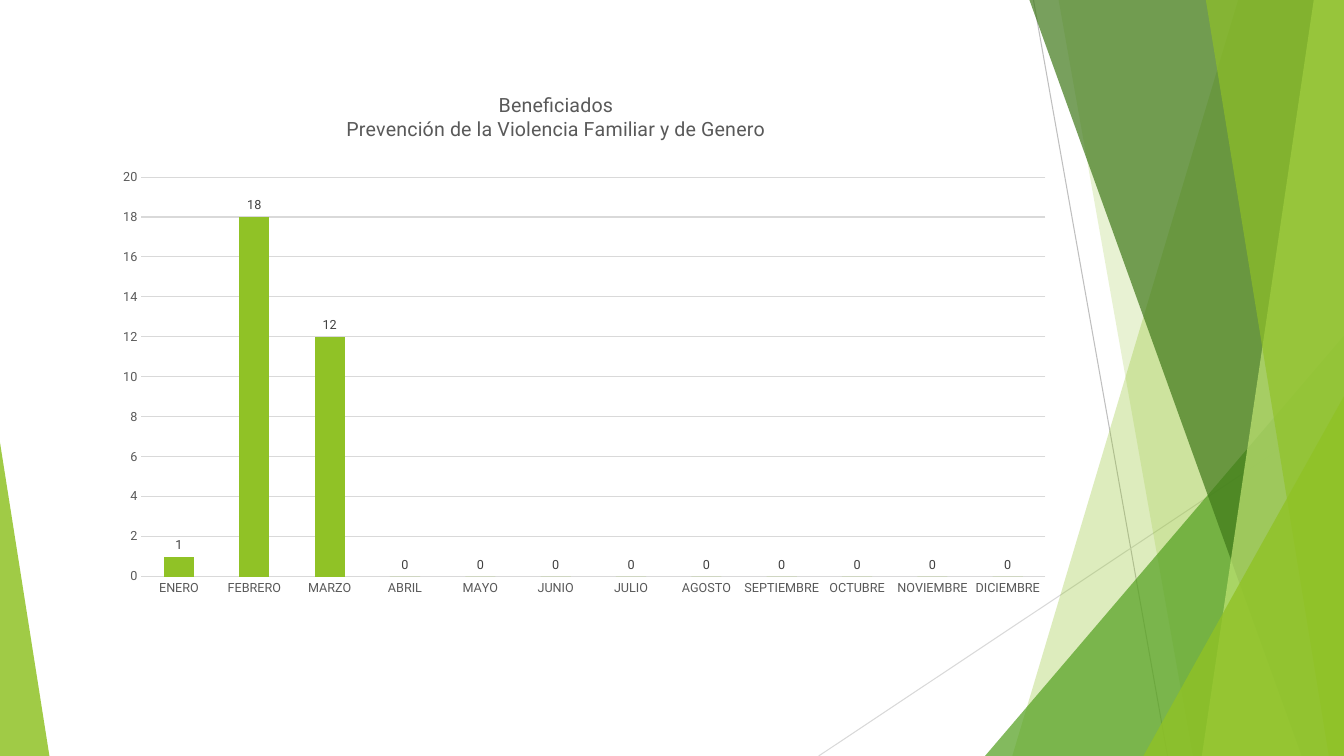
from lxml.etree import SubElement
from pptx import Presentation
from pptx.chart.data import CategoryChartData
from pptx.dml.color import RGBColor
from pptx.enum.chart import XL_CHART_TYPE, XL_LABEL_POSITION, XL_TICK_MARK
from pptx.enum.shapes import MSO_CONNECTOR, MSO_SHAPE
from pptx.oxml import parse_xml
from pptx.oxml.ns import nsdecls, qn
from pptx.util import Inches, Pt

LIME = RGBColor(0x90, 0xC2, 0x26)
GREEN = RGBColor(0x54, 0xA0, 0x21)
DARK = RGBColor(0x3F, 0x78, 0x19)
PALE = RGBColor(0xC0, 0xE4, 0x74)
SILVER = RGBColor(0xBF, 0xBF, 0xBF)
MIST = RGBColor(0xD9, 0xD9, 0xD9)
GRAY = RGBColor(0x59, 0x59, 0x59)
INK = RGBColor(0x40, 0x40, 0x40)
FONT = "Roboto"
WIDE, HIGH = 13.33, 7.5

MONTHS = ["ENERO", "FEBRERO", "MARZO", "ABRIL", "MAYO", "JUNIO", "JULIO",
          "AGOSTO", "SEPTIEMBRE", "OCTUBRE", "NOVIEMBRE", "DICIEMBRE"]
COUNTS = [1, 18, 12] + [0] * 9
TITLE = ["Beneficiados", "Prevención de la Violencia Familiar y de Genero"]


def style(item, **values):
    for name, value in values.items():
        setattr(item, name, value)


def set_font(font, size, color):
    style(font, name=FONT, size=Pt(size), bold=False)
    font.color.rgb = color


def paint(shape, color, alpha):
    shape.shadow.inherit = False
    shape.fill.solid()
    shape.fill.fore_color.rgb = color
    shape.line.fill.background()
    tint = shape.fill._xPr.find(qn("a:solidFill"))[0]
    SubElement(tint, qn("a:alpha")).set("val", str(alpha * 1000))


def add_line(slide, start, end, color):
    line = slide.shapes.add_connector(
        MSO_CONNECTOR.STRAIGHT, *map(Inches, start + end))
    line.line.color.rgb = color
    line.line.width = Pt(0.75)
    SubElement(line._element.spPr, qn("a:effectLst"))


def add_wedge(slide, box, peak, color, alpha):
    wedge = slide.shapes.add_shape(
        MSO_SHAPE.ISOSCELES_TRIANGLE, *map(Inches, box))
    wedge.adjustments[0] = peak
    paint(wedge, color, alpha)


def add_band(slide, box, head, foot, color, alpha):
    left, top, width, height = box
    right, base = left + width, top + height
    points = [(left + head, top), (right, top), (right, base), (left + foot, base)]
    points = [(Inches(x), Inches(y)) for x, y in points]
    path = slide.shapes.build_freeform(*points[0])
    path.add_line_segments(points[1:], close=True)
    paint(path.convert_to_shape(), color, alpha)


def draw_facets(slide, box):
    left, top, width, height = box
    right, base = left + width, top + height

    def corner(wide, high, color, alpha):
        add_wedge(slide, (right - wide, base - high, wide, high), 1, color, alpha)

    add_line(slide, (left + 2.13, top), (left + 3.46, base), SILVER)
    add_line(slide, (right, top + 4.03), (left, base), MIST)
    add_band(slide, box, 4.16, 1.92, LIME, 30)
    add_band(slide, box, 2.38, 3.71, LIME, 20)
    corner(3.56, 4.17, GREEN, 72)
    for head, foot, color, alpha in [(2.09, 4.79, DARK, 70),
                                     (4.91, 3.8, PALE, 70),
                                     (3.84, 5.06, LIME, 65)]:
        add_band(slide, box, head, foot, color, alpha)
    corner(1.99, 3.57, LIME, 80)


def set_layout(node, inner=False, **parts):
    old = node.find(qn("c:layout"))
    if old is not None:
        node.remove(old)
    target = '<c:layoutTarget val="inner"/>' if inner else ""
    modes = "".join(f'<c:{key}Mode val="edge"/>' for key in "xy")
    sizes = "".join(f'<c:{key} val="{part}"/>' for key, part in parts.items())
    layout = parse_xml(f'<c:layout {nsdecls("c")}><c:manualLayout>{target}'
                       f'{modes}{sizes}</c:manualLayout></c:layout>')
    text = node.find(qn("c:tx"))
    node.insert(0 if text is None else 1, layout)


def draw_chart(slide, box):
    data = CategoryChartData()
    data.categories = MONTHS
    data.add_series("Series 1", COUNTS)
    chart = slide.shapes.add_chart(
        XL_CHART_TYPE.COLUMN_CLUSTERED, *map(Inches, box), data).chart
    set_font(chart.font, 10, RGBColor(0, 0, 0))
    style(chart, has_legend=False, has_title=True)

    frame = chart.chart_title.text_frame
    for i, words in enumerate(TITLE):
        para = frame.add_paragraph() if i else frame.paragraphs[0]
        run = para.add_run()
        run.text = words
        set_font(run.font, 14, GRAY)
    chart.chart_title.include_in_layout = False
    set_layout(chart.chart_title._element, x=0.25, y=0.01)

    for axis in (chart.category_axis, chart.value_axis):
        style(axis, major_tick_mark=XL_TICK_MARK.NONE,
              minor_tick_mark=XL_TICK_MARK.NONE)
        set_font(axis.tick_labels.font, 9, GRAY)
        axis.format.line.fill.background()
    style(chart.value_axis, minimum_scale=0, maximum_scale=20, major_unit=2,
          has_major_gridlines=True)
    grid = chart.value_axis.major_gridlines.format.line
    grid.color.rgb = MIST
    grid.width = Pt(0.75)

    plot = chart.plots[0]
    style(plot, gap_width=150, vary_by_categories=False, has_data_labels=True)
    style(plot.data_labels, show_value=True,
          position=XL_LABEL_POSITION.OUTSIDE_END)
    set_font(plot.data_labels.font, 9, INK)
    fill = plot.series[0].format.fill
    fill.solid()
    fill.fore_color.rgb = LIME
    area = chart._chartSpace.chart.plotArea
    set_layout(area, inner=True, x=0.04, y=0.18, w=0.94, h=0.77)


def main():
    deck = Presentation()
    style(deck, slide_width=Inches(WIDE), slide_height=Inches(HIGH))
    slide = deck.slides.add_slide(deck.slide_layouts[6])
    draw_facets(slide, (8.12, 0, WIDE - 8.12, HIGH))
    add_wedge(slide, (0, 4.39, 0.49, 3.11), 0, LIME, 85)
    draw_chart(slide, (1.02, 0.83, 9.54, 5.15))
    deck.save("out.pptx")


if __name__ == "__main__":
    main()
